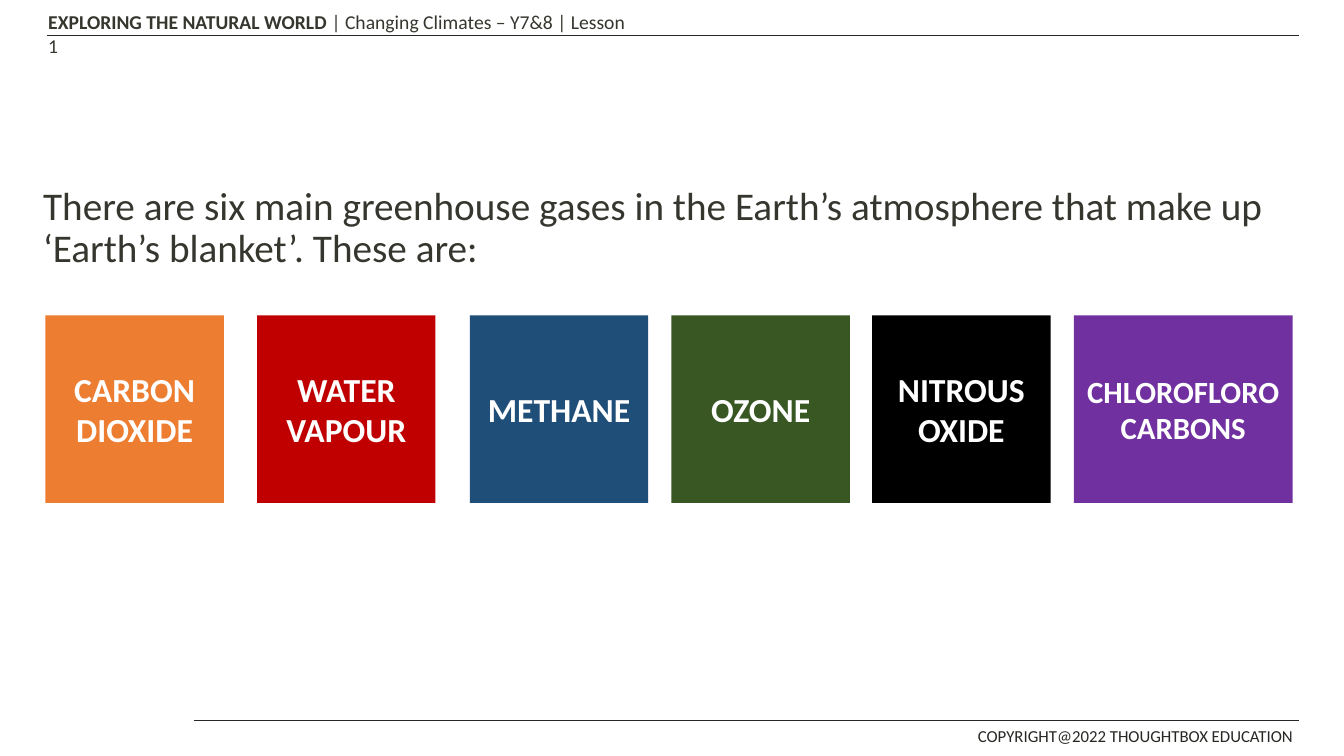
"""Build the slide on the six main greenhouse gases."""
from lxml import etree
from pptx import Presentation
from pptx.dml.color import RGBColor
from pptx.enum.shapes import MSO_CONNECTOR, MSO_SHAPE
from pptx.enum.text import MSO_ANCHOR, PP_ALIGN
from pptx.oxml.ns import qn
from pptx.util import Inches, Pt

LINE, RECT = MSO_CONNECTOR.STRAIGHT, MSO_SHAPE.RECTANGLE
MIDDLE, CENTER = MSO_ANCHOR.MIDDLE, PP_ALIGN.CENTER
FONT, DARK, TEXT, WHITE = "Calibri", "252823", "35372F", "FFFFFF"

HEAD = ("EXPLORING THE NATURAL WORLD ", "| Changing Climates – Y7&8 | Lesson 1")
INTRO = ("There are six main greenhouse gases in the Earth’s atmosphere "
         "that make up ‘Earth’s blanket’. These are:")
FOOT = "COPYRIGHT@2022 THOUGHTBOX EDUCATION"
RULES = [(0.47, 0.35), (1.92, 7.15)]
RIGHT = 12.88
GASES = [
    ("CARBON DIOXIDE", "ED7D31", 0.45, 1.77, 24),
    ("WATER VAPOUR", "C00000", 2.55, 1.77, 24),
    ("METHANE", "1F4E79", 4.66, 1.77, 24),
    ("OZONE", "385723", 6.66, 1.77, 24),
    ("NITROUS OXIDE", "000000", 8.65, 1.77, 24),
    ("CHLOROFLOROCARBONS", "7030A0", 10.65, 2.17, 22),
]
TOP, HIGH = 3.13, 1.86


def color(code):
    return RGBColor.from_string(code)


def style(font, size, code, bold=None):
    font.name, font.size, font.bold = FONT, Pt(size), bold
    font.color.rgb = color(code)


def add_rule(slide, left, y):
    rule = slide.shapes.add_connector(
        LINE, Inches(left), Inches(y), Inches(RIGHT), Inches(y))
    rule.line.color.rgb = color(DARK)
    rule.line.width = Pt(1)
    etree.SubElement(rule._element.spPr, qn("a:effectLst"))


def add_text(slide, parts, box, size, code):
    frame = slide.shapes.add_textbox(*map(Inches, box)).text_frame
    frame.word_wrap = True
    para = frame.paragraphs[0]
    for part in parts:
        para.add_run().text = part
    style(para.font, size, code)
    return para


def add_gas(slide, name, fill, left, width, size):
    tile = slide.shapes.add_shape(
        RECT, Inches(left), Inches(TOP), Inches(width), Inches(HIGH))
    tile.shadow.inherit = False
    tile.fill.solid()
    tile.fill.fore_color.rgb = color(fill)
    tile.line.fill.background()
    frame = tile.text_frame
    frame.word_wrap = True
    frame.vertical_anchor = MIDDLE
    para = frame.paragraphs[0]
    para.text = name
    para.alignment = CENTER
    style(para.font, size, WHITE, True)


def main():
    deck = Presentation()
    deck.slide_width, deck.slide_height = Inches(13.33), Inches(7.5)
    slide = deck.slides.add_slide(deck.slide_layouts[6])
    for rule in RULES:
        add_rule(slide, *rule)
    add_text(slide, [FOOT], (9.6, 7.15, 3.4, 0.31), 12, DARK)
    head = add_text(slide, HEAD, (0.38, 0.05, 5.98, 0.34), 14, TEXT)
    head.runs[0].font.bold = True
    intro = add_text(slide, [INTRO], (0.33, 1.8, 12.55, 1.1), 28, TEXT)
    intro.line_spacing = 0.9
    for gas in GASES:
        add_gas(slide, *gas)
    deck.save("out.pptx")


if __name__ == "__main__":
    main()
